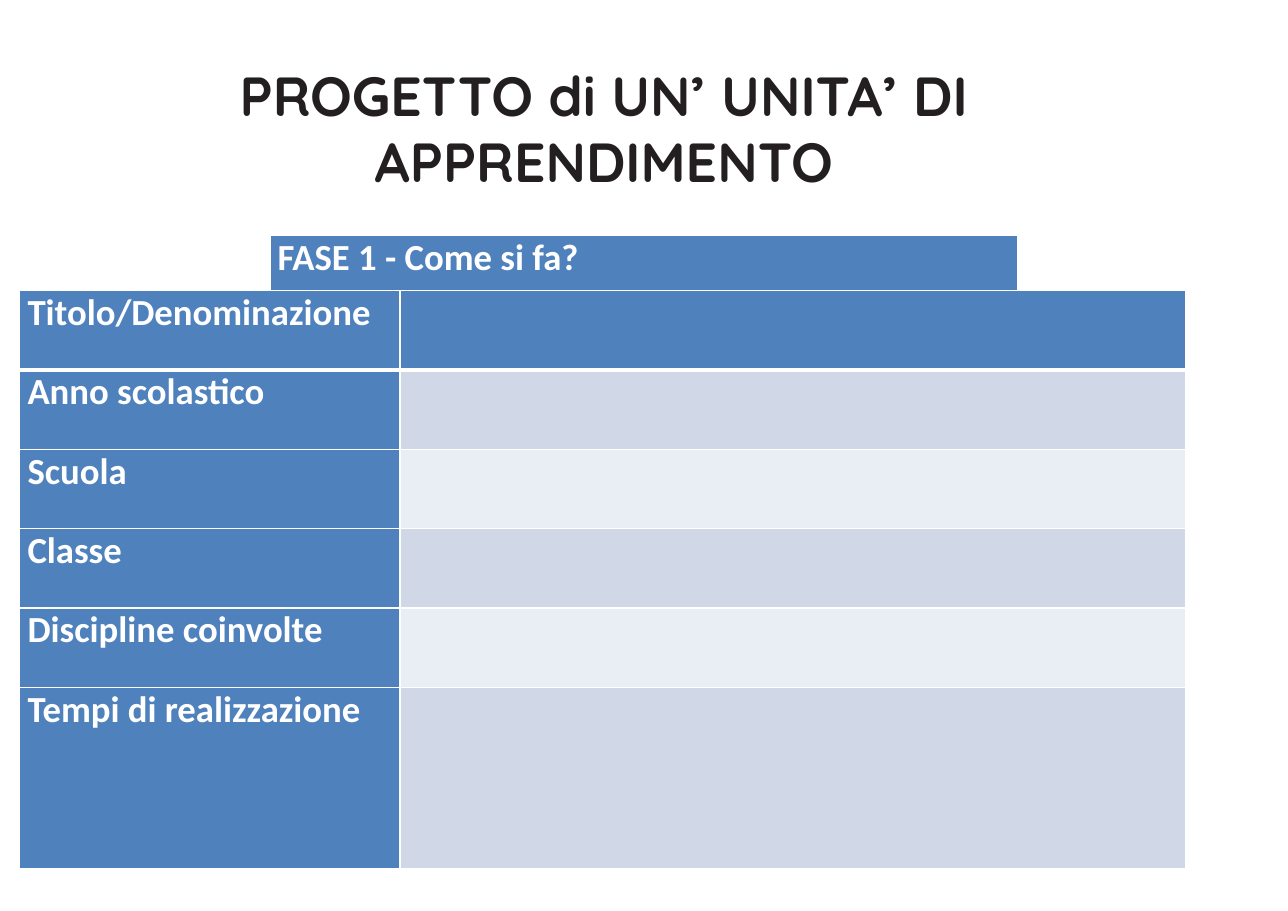
from lxml.etree import SubElement
from pptx import Presentation
from pptx.dml.color import RGBColor
from pptx.enum.text import MSO_ANCHOR, PP_ALIGN
from pptx.oxml.ns import qn
from pptx.util import Inches, Pt

COLORS = {
    "ink": "231F20",
    "white": "FFFFFF",
    "blue": "4F81BD",
    "band_dark": "D0D8E8",
    "band_light": "E9EDF4",
}
LABELS = ["Titolo/Denominazione", "Anno scolastico", "Scuola", "Classe",
          "Discipline coinvolte", "Tempi di realizzazione"]
LABEL_WIDTH, VALUE_WIDTH = 3.45, 7.13
ROW_HEIGHTS = [0.72] * 5 + [1.65]


def format_run(run, font_name, size, color):
    run.font.name = font_name
    run.font.size = Pt(size)
    run.font.bold = True
    run.font.color.rgb = RGBColor.from_string(COLORS[color])


def fill_cell(cell, text, color, bottom_width):
    cell.margin_left = cell.margin_right = Inches(0.07)
    cell.margin_top = cell.margin_bottom = 0
    properties = cell._tc.get_or_add_tcPr()
    for side, width in (("L", 1), ("R", 1), ("T", 1), ("B", bottom_width)):
        border = SubElement(properties, qn(f"a:ln{side}"), w=str(Pt(width)))
        border_fill = SubElement(border, qn("a:solidFill"))
        SubElement(border_fill, qn("a:srgbClr"), val=COLORS["white"])
    cell.fill.solid()
    cell.fill.fore_color.rgb = RGBColor.from_string(COLORS[color])
    cell.text_frame.text = text
    for run in cell.text_frame.paragraphs[0].runs:
        format_run(run, "Calibri", 24, "white")


presentation = Presentation()
presentation.slide_width = Inches(11.69)
presentation.slide_height = Inches(8.27)
slide = presentation.slides.add_slide(presentation.slide_layouts[0])
subtitle = slide.placeholders[1].element
subtitle.getparent().remove(subtitle)

title = slide.shapes.title
title.left, title.top = Inches(0.51), Inches(0.55)
title.width, title.height = Inches(9.94), Inches(1.21)
title_frame = title.text_frame
title_frame.text = "PROGETTO di UN’ UNITA’ DI APPRENDIMENTO"
title_frame.word_wrap = True
title_frame.vertical_anchor = MSO_ANCHOR.MIDDLE
title_frame.margin_left = title_frame.margin_right = 0
title_frame.margin_top = title_frame.margin_bottom = 0
title_paragraph = title_frame.paragraphs[0]
title_paragraph.alignment = PP_ALIGN.CENTER
format_run(title_paragraph.runs[0], "Quicksand", 36, "ink")

phase_table = slide.shapes.add_table(
    1, 1, Inches(2.45), Inches(2.14), Inches(6.79), Inches(3.62)).table
fill_cell(phase_table.cell(0, 0), "FASE 1 - Come si fa?", "blue", 3)

unit_table = slide.shapes.add_table(
    len(LABELS), 2, Inches(0.18), Inches(2.64),
    Inches(LABEL_WIDTH + VALUE_WIDTH), Inches(sum(ROW_HEIGHTS))).table
unit_table.columns[0].width = Inches(LABEL_WIDTH)
unit_table.columns[1].width = Inches(VALUE_WIDTH)
for index, (label, height) in enumerate(zip(LABELS, ROW_HEIGHTS)):
    unit_table.rows[index].height = Inches(height)
    band = "band_dark" if index % 2 else "band_light"
    value_color = band if index else "blue"
    bottom_width = 1 if index else 3
    fill_cell(unit_table.cell(index, 0), label, "blue", bottom_width)
    fill_cell(unit_table.cell(index, 1), "", value_color, bottom_width)

presentation.save("out.pptx")
